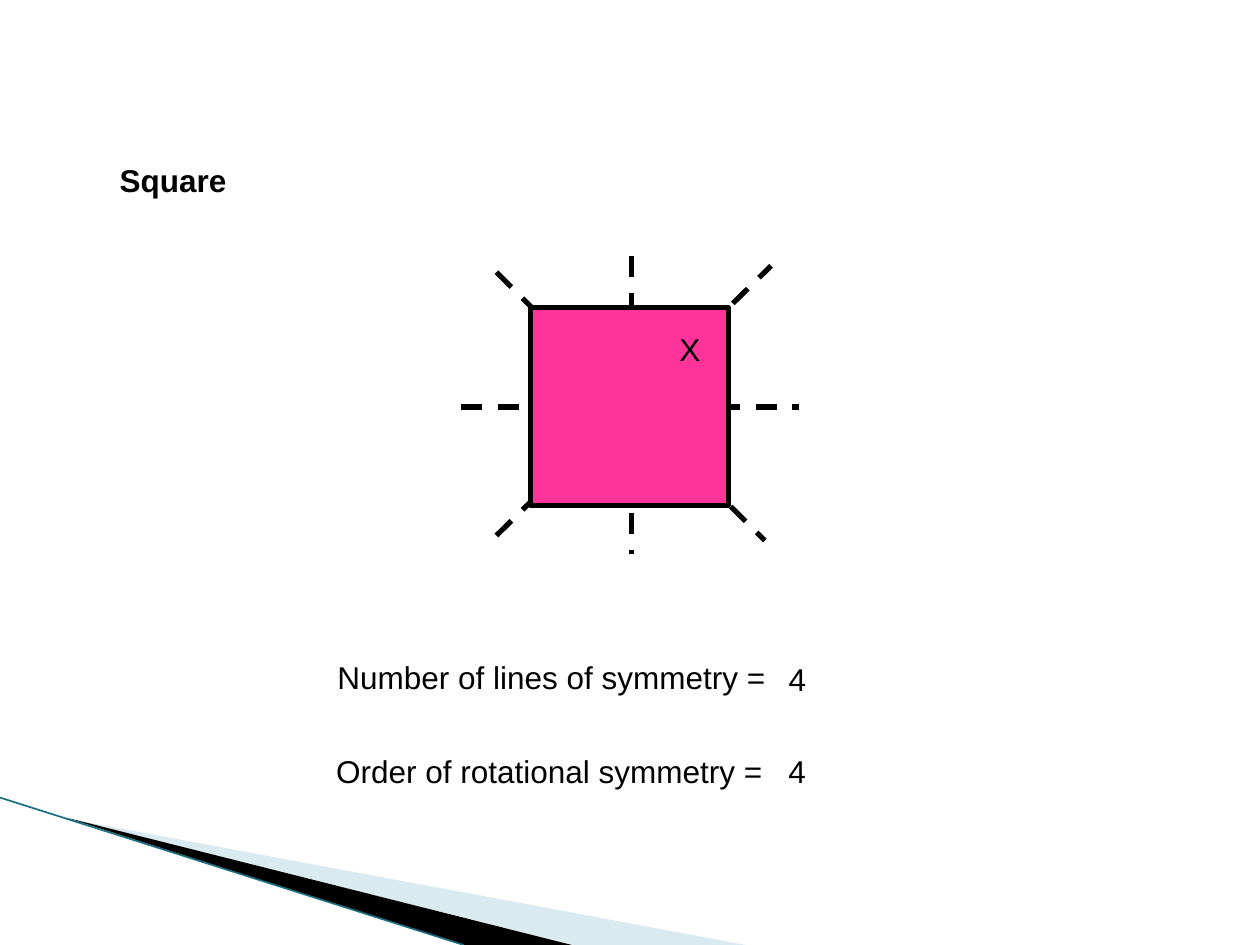
from lxml import etree
from pptx import Presentation
from pptx.dml.color import RGBColor
from pptx.enum.dml import MSO_LINE
from pptx.enum.shapes import MSO_CONNECTOR, MSO_SHAPE
from pptx.enum.text import MSO_ANCHOR, PP_ALIGN
from pptx.oxml.ns import qn
from pptx.util import Inches, Pt

BLACK = RGBColor(0x00, 0x00, 0x00)
PINK = RGBColor(0xFF, 0x33, 0x99)
PALE_BLUE = RGBColor(0xA0, 0xCB, 0xDC)
TEAL = RGBColor(0x1B, 0x6E, 0x80)
STRAIGHT = MSO_CONNECTOR.STRAIGHT
DASH = MSO_LINE.DASH
RECTANGLE = MSO_SHAPE.RECTANGLE
TOP = MSO_ANCHOR.TOP
LEFT, RIGHT = PP_ALIGN.LEFT, PP_ALIGN.RIGHT


def add_line(start, end, color, width):
    line = slide.shapes.add_connector(STRAIGHT, *map(Inches, start + end))
    line.line.color.rgb = color
    line.line.width = Pt(width)
    etree.SubElement(line._element.spPr, qn("a:effectLst"))
    return line


def write(frame, text, align=LEFT, bold=False):
    frame.word_wrap = True
    frame.vertical_anchor = TOP
    paragraph = frame.paragraphs[0]
    paragraph.alignment = align
    run = paragraph.add_run()
    run.text = text
    run.font.name = "Arial"
    run.font.size = Pt(18)
    run.font.bold = bold
    run.font.color.rgb = BLACK


prs = Presentation()
prs.slide_width, prs.slide_height = Inches(10), Inches(7.5)
slide = prs.slides.add_slide(prs.slide_layouts[5])

# Corner decoration
wedges = [
    (PALE_BLUE, 40, [(0.55, 6.5), (5.92, 7.5), (4.56, 7.5)]),
    (BLACK, 100, [(0.53, 6.49), (4.54, 7.5), (3.68, 7.5)]),
]
for color, opacity, points in wedges:
    corners = [(Inches(x), Inches(y)) for x, y in points]
    builder = slide.shapes.build_freeform(*corners[0])
    builder.add_line_segments(corners[1:], close=True)
    wedge = builder.convert_to_shape()
    wedge.shadow.inherit = False
    wedge.line.fill.background()
    wedge.fill.solid()
    wedge.fill.fore_color.rgb = color
    if opacity < 100:
        rgb = wedge._element.spPr.find(".//" + qn("a:srgbClr"))
        etree.SubElement(rgb, qn("a:alpha"), val=str(opacity * 1000))
add_line((0, 6.33), (3.68, 7.5), TEAL, 0.95)

# Lines of symmetry, partly covered by the square
symmetry_lines = [
    ((3.94, 4.25), (6.12, 2.11)),
    ((5.01, 2.03), (5.01, 4.4)),
    ((3.66, 3.23), (6.34, 3.23)),
    ((3.94, 2.16), (6.07, 4.29)),
]
for start, end in symmetry_lines:
    add_line(start, end, BLACK, 3).line.dash_style = DASH

square = slide.shapes.add_shape(
    RECTANGLE, Inches(4.21), Inches(2.44), Inches(1.57), Inches(1.57))
square.shadow.inherit = False
square.fill.solid()
square.fill.fore_color.rgb = PINK
square.line.color.rgb = BLACK
square.line.width = Pt(3)
square.text_frame.margin_right = Inches(0.22)
square.text_frame.margin_top = Inches(0.18)
write(square.text_frame, "X", align=RIGHT)

title = slide.shapes.title
title.left, title.top = Inches(0.85), Inches(1.23)
title.width, title.height = Inches(2.31), Inches(0.4)
write(title.text_frame, "Square", bold=True)

facts = [
    ("Number of lines of symmetry =", 2.58, 5.17, 3.92),
    ("4", 6.16, 5.19, 0.82),
    ("Order of rotational symmetry =", 2.57, 5.92, 3.64),
    ("4", 6.16, 5.92, 0.87),
]
for text, left, top, width in facts:
    box = slide.shapes.add_textbox(
        Inches(left), Inches(top), Inches(width), Inches(0.4))
    write(box.text_frame, text)

prs.save("out.pptx")
